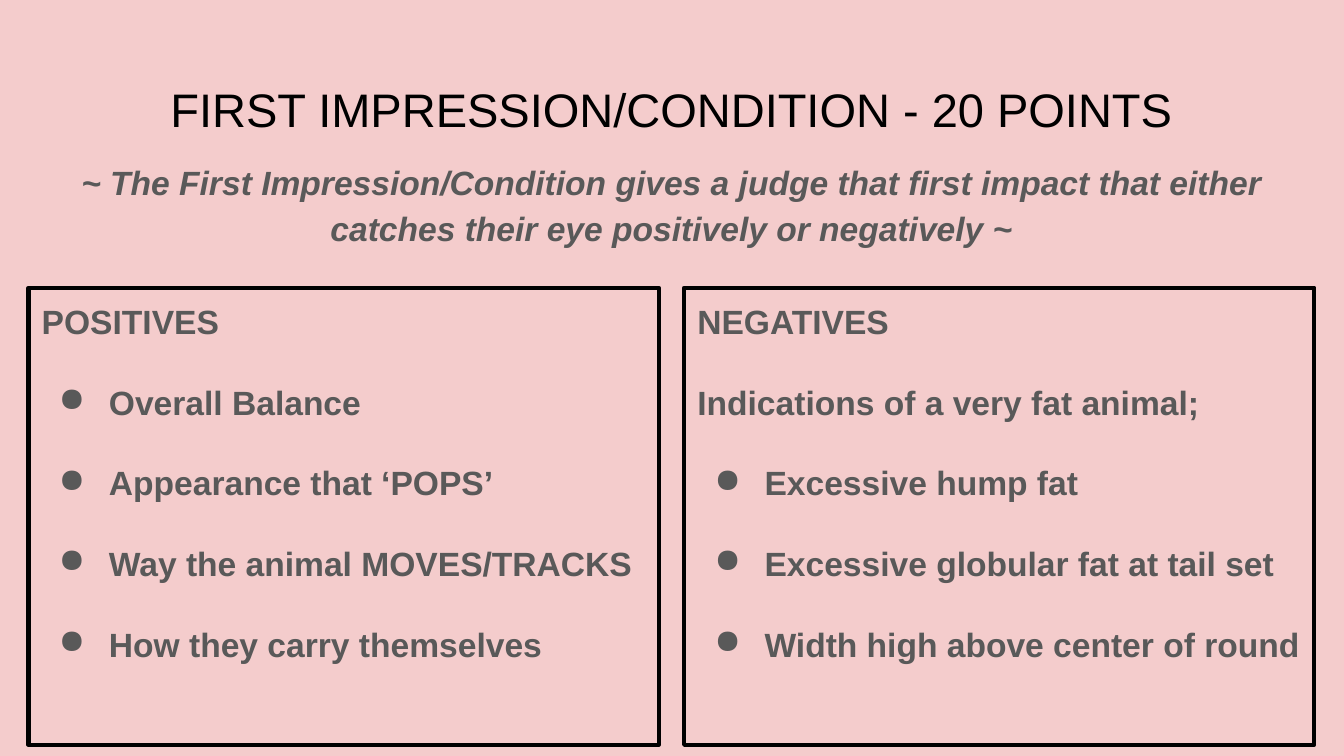
from dataclasses import dataclass

from lxml import etree
from pptx import Presentation
from pptx.dml.color import RGBColor
from pptx.enum.shapes import MSO_SHAPE
from pptx.enum.text import MSO_ANCHOR, PP_ALIGN
from pptx.oxml.ns import qn
from pptx.util import Cm, Pt

RECT = MSO_SHAPE.RECTANGLE
TOP, BOTTOM = MSO_ANCHOR.TOP, MSO_ANCHOR.BOTTOM
LEFT, CENTER = PP_ALIGN.LEFT, PP_ALIGN.CENTER


@dataclass(frozen=True)
class Theme:
    back: RGBColor = RGBColor(0xF4, 0xCC, 0xCC)
    ink: RGBColor = RGBColor(0, 0, 0)
    gray: RGBColor = RGBColor(0x59, 0x59, 0x59)
    font: str = "Arial"
    title: float = 25.2
    body: float = 18
    border: float = 2.25
    gap: float = 21.6


class Deck:
    def __init__(self, theme):
        self.theme = theme
        self.file = Presentation()
        self.file.slide_width, self.file.slide_height = Cm(25.4), Cm(14.29)
        self.slide = self.file.slides.add_slide(self.file.slide_layouts[6])
        fill = self.slide.background.fill
        fill.solid()
        fill.fore_color.rgb = theme.back

    def frame(self, shape, anchor):
        frame = shape.text_frame
        frame.word_wrap = True
        frame.vertical_anchor = anchor
        frame.margin_left = frame.margin_right = Cm(0.25)
        frame.margin_top = frame.margin_bottom = Cm(0.25)
        return frame

    def words(self, para, text, size, color, bold=False, italic=False):
        run = para.add_run()
        run.text = text
        font = run.font
        font.name, font.size = self.theme.font, Pt(size)
        font.bold, font.italic = bold, italic
        font.color.rgb = color

    def label(self, anchor, x, y, w, h):
        box = self.slide.shapes.add_textbox(Cm(x), Cm(y), Cm(w), Cm(h))
        para = self.frame(box, anchor).paragraphs[0]
        para.alignment = CENTER
        return para

    def title(self, text, x, y, w, h):
        para = self.label(BOTTOM, x, y, w, h)
        self.words(para, text, self.theme.title, self.theme.ink)

    def quote(self, text, x, y, w, h):
        para = self.label(TOP, x, y, w, h)
        para.line_spacing = 1.15
        self.words(para, text, self.theme.body, self.theme.gray, True, True)

    def bullet(self, para):
        props = para._p.get_or_add_pPr()
        props.set("marL", str(Cm(1.27)))
        props.set("indent", str(Cm(-0.95)))
        color = etree.SubElement(props, qn("a:buClr"))
        etree.SubElement(color, qn("a:srgbClr"), val=str(self.theme.gray))
        etree.SubElement(props, qn("a:buChar"), char="●")

    def panel(self, plain, items, x, y, w, h):
        box = self.slide.shapes.add_shape(RECT, Cm(x), Cm(y), Cm(w), Cm(h))
        box.shadow.inherit = False
        box.fill.background()
        box.line.color.rgb = self.theme.ink
        box.line.width = Pt(self.theme.border)
        frame = self.frame(box, TOP)
        for i, text in enumerate(plain + items):
            para = frame.add_paragraph() if i else frame.paragraphs[0]
            para.alignment = LEFT
            if i:
                para.space_before = Pt(self.theme.gap)
            if i >= len(plain):
                self.bullet(para)
            self.words(para, text, self.theme.body, self.theme.gray, True)


def main():
    deck = Deck(Theme())
    deck.title("FIRST IMPRESSION/CONDITION - 20 POINTS", 0.86, 1.24, 23.67, 1.6)
    deck.quote(
        "~ The First Impression/Condition gives a judge that first impact "
        "that either catches their eye positively or negatively ~",
        0.86, 2.69, 23.67, 3.18,
    )
    panels = [
        (["POSITIVES"],
         ["Overall Balance", "Appearance that ‘POPS’",
          "Way the animal MOVES/TRACKS", "How they carry themselves"]),
        (["NEGATIVES", "Indications of a very fat animal;"],
         ["Excessive hump fat", "Excessive globular fat at tail set",
          "Width high above center of round"]),
    ]
    for i, (plain, items) in enumerate(panels):
        deck.panel(plain, items, 0.54 + i * 12.39, 5.44, 11.91, 8.64)
    deck.file.save("out.pptx")


if __name__ == "__main__":
    main()
